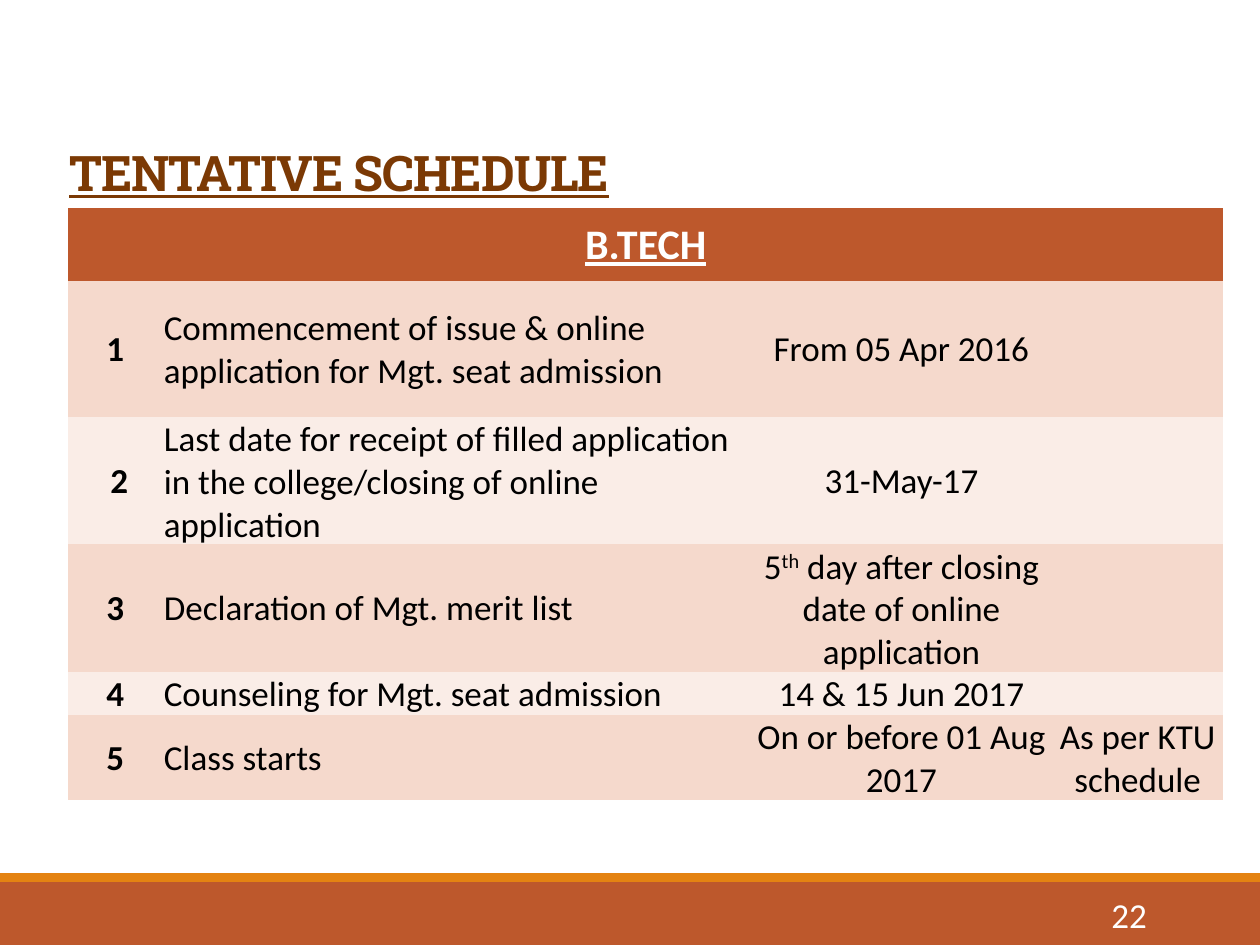
from dataclasses import dataclass

from pptx import Presentation
from pptx.dml.color import RGBColor
from pptx.enum.shapes import MSO_SHAPE
from pptx.enum.text import MSO_ANCHOR, PP_ALIGN
from pptx.oxml.ns import qn
from pptx.util import Inches, Pt

RECTANGLE = MSO_SHAPE.RECTANGLE
MIDDLE, BOTTOM = MSO_ANCHOR.MIDDLE, MSO_ANCHOR.BOTTOM
LEFT, CENTER, RIGHT = PP_ALIGN.LEFT, PP_ALIGN.CENTER, PP_ALIGN.RIGHT
PLAIN_TABLE_STYLE = "{2D5ABB26-0587-4C30-8999-92F81FD0307C}"


@dataclass(frozen=True)
class Theme:
    rust: str = "BD582C"
    orange: str = "E48312"
    brown: str = "7B3904"
    white: str = "FFFFFF"
    black: str = "000000"
    bands: tuple[str, str] = ("F5D9CC", "FAEDE7")
    title_font: str = "Roboto Slab"
    body_font: str = "Calibri"
    title_size: int = 28
    header_size: int = 24
    body_size: int = 20


THEME = Theme()


@dataclass(frozen=True)
class Box:
    left: float
    top: float
    width: float
    height: float

    def lengths(self) -> tuple:
        return tuple(Inches(value) for value in (self.left, self.top, self.width, self.height))


@dataclass(frozen=True)
class TextStyle:
    size: int = THEME.body_size
    color: str = THEME.black
    font: str = THEME.body_font
    bold: bool = False
    underline: bool = False


@dataclass(frozen=True)
class Step:
    number: str
    activity: str
    date: str
    remark: str = ""
    height: float = 0.86


BODY = TextStyle()
NUMBER = TextStyle(bold=True)
HEADER = TextStyle(THEME.header_size, THEME.white, bold=True, underline=True)
TITLE = TextStyle(THEME.title_size, THEME.brown, THEME.title_font, True, True)
PAGE_NUMBER = TextStyle(color=THEME.white)

COLUMN_WIDTHS = (0.75, 4.67, 2.39, 1.36)
HEADER_HEIGHT = 0.58
# A caret pair encloses superscript text
STEPS = (
    Step("1", "Commencement of issue & online application for Mgt. seat admission",
         "From 05 Apr 2016", height=1.08),
    Step(" 2", "Last date for receipt of filled application in the college/closing of online application",
         "31-May-17"),
    Step("3", "Declaration of Mgt. merit list",
         "5^th^ day after closing date of online application"),
    Step("4", "Counseling for Mgt. seat admission", "14 & 15 Jun 2017", height=0.29),
    Step("5", "Class starts", "On or before 01 Aug 2017", "As per KTU schedule", 0.58),
)


def write_text(paragraph, text: str, style: TextStyle, alignment=LEFT) -> None:
    paragraph.alignment = alignment
    for index, part in enumerate(text.split("^")):
        run = paragraph.add_run()
        run.text = part
        run.font.name = style.font
        run.font.size = Pt(style.size)
        run.font.bold = style.bold
        run.font.underline = style.underline
        run.font.color.rgb = RGBColor.from_string(style.color)
        if index % 2:
            run._r.get_or_add_rPr().set("baseline", "30000")


def add_bar(slide, box: Box, color: str) -> None:
    shape = slide.shapes.add_shape(RECTANGLE, *box.lengths())
    shape.shadow.inherit = False
    shape.fill.solid()
    shape.fill.fore_color.rgb = RGBColor.from_string(color)
    shape.line.fill.background()


def add_label(slide, box: Box, text: str, style: TextStyle, anchor, alignment=LEFT):
    frame = slide.shapes.add_textbox(*box.lengths()).text_frame
    frame.word_wrap = True
    frame.vertical_anchor = anchor
    write_text(frame.paragraphs[0], text, style, alignment)
    return frame.paragraphs[0]


def format_cell(cell, color: str) -> None:
    cell.fill.solid()
    cell.fill.fore_color.rgb = RGBColor.from_string(color)
    cell.vertical_anchor = MIDDLE
    cell.margin_left = cell.margin_right = cell.margin_top = Inches(0.01)
    cell.margin_bottom = 0


def add_schedule(slide, left: float, top: float) -> None:
    heights = (HEADER_HEIGHT, *(step.height for step in STEPS))
    box = Box(left, top, sum(COLUMN_WIDTHS), sum(heights))
    table = slide.shapes.add_table(len(heights), len(COLUMN_WIDTHS), *box.lengths()).table
    table._tbl.tblPr.find(qn("a:tableStyleId")).text = PLAIN_TABLE_STYLE
    for column, width in zip(table.columns, COLUMN_WIDTHS):
        column.width = Inches(width)
    for row, height in zip(table.rows, heights):
        row.height = Inches(height)

    # Header across all columns
    header = table.cell(0, 0)
    header.merge(table.cell(0, len(COLUMN_WIDTHS) - 1))
    format_cell(header, THEME.rust)
    write_text(header.text_frame.paragraphs[0], "B.TECH", HEADER, CENTER)

    # Banded steps
    for index, step in enumerate(STEPS):
        entries = (
            (step.number, NUMBER, CENTER),
            (step.activity, BODY, LEFT),
            (step.date, BODY, CENTER),
            (step.remark, BODY, CENTER),
        )
        for column, (text, style, alignment) in enumerate(entries):
            cell = table.cell(index + 1, column)
            format_cell(cell, THEME.bands[index % 2])
            if text:
                write_text(cell.text_frame.paragraphs[0], text, style, alignment)


def main() -> None:
    presentation = Presentation()
    presentation.slide_width = Inches(10)
    presentation.slide_height = Inches(7.5)
    slide = presentation.slides.add_slide(presentation.slide_layouts[6])

    # Footer bars
    add_bar(slide, Box(0, 7, 10, 0.5), THEME.rust)
    add_bar(slide, Box(0, 6.93, 10, 0.07), THEME.orange)

    # Title with tightened letters
    title = add_label(slide, Box(0.45, 1.03, 8.75, 0.62), "TENTATIVE SCHEDULE", TITLE, BOTTOM)
    title.line_spacing = 0.85
    title.runs[0]._r.get_or_add_rPr().set("spc", "-50")

    # Schedule and page number
    add_schedule(slide, 0.54, 1.65)
    add_label(slide, Box(8.12, 7.06, 1.08, 0.4), "22", PAGE_NUMBER, MIDDLE, RIGHT)

    presentation.save("out.pptx")


if __name__ == "__main__":
    main()
